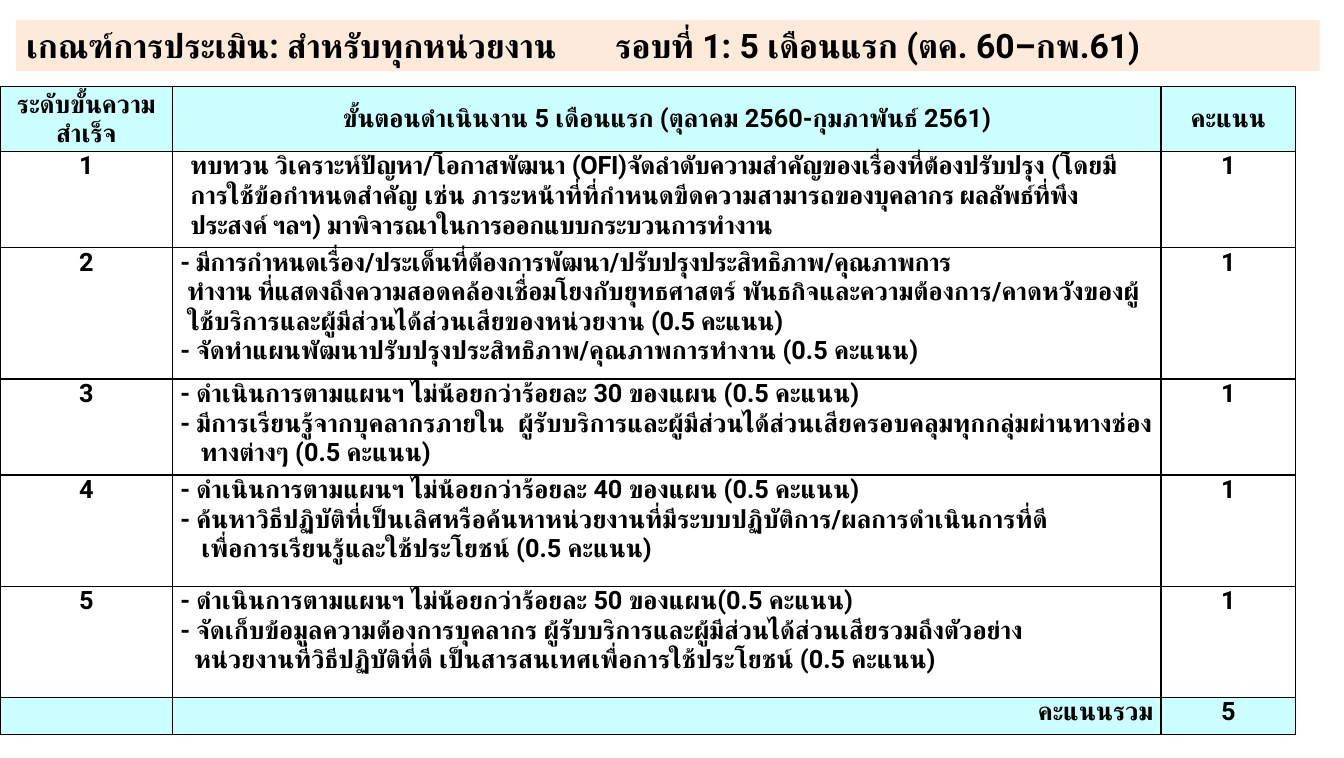
from lxml.etree import SubElement
from pptx import Presentation
from pptx.dml.color import RGBColor
from pptx.enum.lang import MSO_LANGUAGE_ID as LANG
from pptx.enum.shapes import MSO_SHAPE as SHAPE
from pptx.enum.text import MSO_ANCHOR as ANCHOR, PP_ALIGN as ALIGN
from pptx.oxml import parse_xml
from pptx.oxml.ns import nsdecls, qn
from pptx.util import Pt

COLORS = {"text": "000000", "border": "000000", "title": "FDEADA", "band": "CCFFFF"}
FONT = "Roboto"
COLS = [123.1, 704.2, 95.8]
ROWS = [46.1, 68.4, 93.6, 68.4, 79.2, 79.2, 26.6]

TITLE = [("เกณฑ์การประเมิน: สำหรับทุกหน่วยงาน", 0), (" ", 36),
         ("รอบที่ 1: 5 เดือนแรก (ตค. 60–กพ.61)", 0)]
HEADERS = ["ระดับขั้นความสำเร็จ",
           "ขั้นตอนดำเนินงาน 5 เดือนแรก (ตุลาคม 2560-กุมภาพันธ์ 2561)", "คะแนน"]
TOTAL = ["", "คะแนนรวม", "5"]

STEPS = [
    [(7.2, 0, [
        ("ทบทวน วิเคราะห์ปัญหา/โอกาสพัฒนา (OFI)จัดลำดับความสำคัญของเรื่องที่ต้องปรับปรุง", -0.2),
        (" (โดยมีการใช้ข้อกำหนดสำคัญ เช่น ภาระหน้าที่ที่กำหนดขีดความสามารถ", 0),
        ("ของบุคลากร ผลลัพธ์ที่พึงประสงค์ ฯลฯ) มาพิจารณาในการออกแบบกระบวนการทำงาน", -0.3)])],
    [(0, 0, [("- มีการกำหนดเรื่อง/ประเด็นที่ต้องการพัฒนา/ปรับปรุงประสิทธิภาพ/คุณภาพการ", -0.3)]),
     (5, 0, [
         ("ทำงาน ที่แสดงถึงความ", -0.3), ("สอดคล้อง", 0), ("เชื่อมโยง", -0.3),
         ("กับยุทธศาสตร์ พันธกิจและความต้องการ/คาดหวังของผู้ใช้บริการ"
          "และผู้มีส่วนได้ส่วนเสียของหน่วยงาน ", 0),
         ("(0.5 คะแนน)", -0.3)]),
     (0, 0, [("- จัดทำแผนพัฒนาปรับปรุงประสิทธิภาพ/คุณภาพการทำงาน (0.5 คะแนน)", 0)])],
    [(0, 0, [("- ดำเนินการตามแผนฯ ไม่น้อยกว่าร้อยละ 30 ของแผน (0.5 คะแนน)", 0)]),
     (14.4, -14.4, [
         ("- มีการเรียนรู้จากบุคลากรภายใน", 0), (" ", 5),
         ("ผู้รับบริการและผู้มีส่วนได้ส่วนเสียครอบคลุมทุกกลุ่มผ่านทางช่องทางต่างๆ (0.5 คะแนน)", 0)])],
    [(0, 0, [("- ดำเนินการตามแผนฯ ไม่น้อยกว่าร้อยละ 40 ของแผน (0.5 คะแนน)", 0)]),
     (0, 0, [("- ค้นหาวิธีปฏิบัติที่เป็นเลิศหรือค้นหาหน่วยงานที่มีระบบปฏิบัติการ/ผลการดำเนินการที่ดี", 0)]),
     (15, 0, [("เพื่อการเรียนรู้และใช้ประโยชน์ (0.5 คะแนน)", 0)])],
    [(0, 0, [("- ดำเนินการตามแผนฯ ไม่น้อยกว่าร้อยละ 50 ของแผน(0.5 คะแนน)", 0)]),
     (0, 0, [("- จัดเก็บข้อมูลความต้องการบุคลากร ผู้รับบริการและผู้มีส่วนได้ส่วนเสียรวมถึงตัวอย่าง", 0)]),
     (10, 0, [("หน่วยงานที่วิธีปฏิบัติที่ดี เป็นสารสนเทศเพื่อการใช้ประโยชน์ (0.5 คะแนน)", 0)])],
]


def rgb(name):
    return RGBColor.from_string(COLORS[name])


def add_text(p, text, size=18, align=ALIGN.LEFT, spacing=0, margin=0, indent=0):
    p.alignment = align
    pPr = p._p.get_or_add_pPr()
    pPr.set("marL", str(Pt(margin)))
    pPr.set("indent", str(Pt(indent)))
    r = p.add_run()
    r.text = text
    r.font.name, r.font.size, r.font.bold = FONT, Pt(size), True
    r.font.color.rgb = rgb("text")
    r.font.language_id = LANG.THAI
    rPr = r._r.get_or_add_rPr()
    SubElement(rPr, qn("a:cs"), typeface=FONT)
    if spacing:
        rPr.set("spc", str(round(spacing * 100)))


def add_borders(cell):
    tcPr = cell._tc.get_or_add_tcPr()
    for i, side in enumerate("LRTB"):
        tcPr.insert(i, parse_xml(
            f'<a:ln{side} {nsdecls("a")} w="{Pt(1)}"><a:solidFill>'
            f'<a:srgbClr val="{COLORS["border"]}"/></a:solidFill></a:ln{side}>'))


def add_title(slide, x, y, w, h):
    sp = slide.shapes.add_shape(SHAPE.RECTANGLE, Pt(x), Pt(y), Pt(w), Pt(h))
    sp.shadow.inherit = False
    sp.fill.solid()
    sp.fill.fore_color.rgb = rgb("title")
    sp.line.fill.background()
    tf = sp.text_frame
    tf.word_wrap = True
    tf.vertical_anchor = ANCHOR.TOP
    for text, spacing in TITLE:
        add_text(tf.paragraphs[0], text, size=24, spacing=spacing)


def add_steps(tf, steps):
    for i, (margin, indent, runs) in enumerate(steps):
        p = tf.add_paragraph() if i else tf.paragraphs[0]
        for text, spacing in runs:
            add_text(p, text, spacing=spacing, margin=margin, indent=indent)


def add_criteria(slide, x, y, w, h):
    frame = slide.shapes.add_table(len(ROWS), len(COLS), Pt(x), Pt(y), Pt(w), Pt(h))
    table = frame.table
    for col, width in zip(table.columns, COLS):
        col.width = Pt(width)
    for row, height in zip(table.rows, ROWS):
        row.height = Pt(height)
    body = [[str(n), steps, "1"] for n, steps in enumerate(STEPS, 1)]
    rows = [HEADERS, *body, TOTAL]
    last = len(rows) - 1
    for i, row in enumerate(rows):
        for j, content in enumerate(row):
            cell = table.cell(i, j)
            cell.margin_left = cell.margin_right = Pt(5.4)
            cell.margin_top = cell.margin_bottom = 0
            cell.vertical_anchor = ANCHOR.MIDDLE if i == 0 else ANCHOR.TOP
            if i in (0, last):
                cell.fill.solid()
                cell.fill.fore_color.rgb = rgb("band")
            else:
                cell.fill.background()
            add_borders(cell)
            if isinstance(content, list):
                add_steps(cell.text_frame, content)
            elif content:
                align = ALIGN.RIGHT if (i, j) == (last, 1) else ALIGN.CENTER
                add_text(cell.text_frame.paragraphs[0], content, align=align)


def main():
    prs = Presentation()
    prs.slide_width, prs.slide_height = Pt(957.6), Pt(540)
    slide = prs.slides.add_slide(prs.slide_layouts[6])
    add_title(slide, 11.5, 14.4, 928.8, 36.3)
    add_criteria(slide, 0, 61.9, sum(COLS), sum(ROWS))
    prs.save("out.pptx")


if __name__ == "__main__":
    main()
